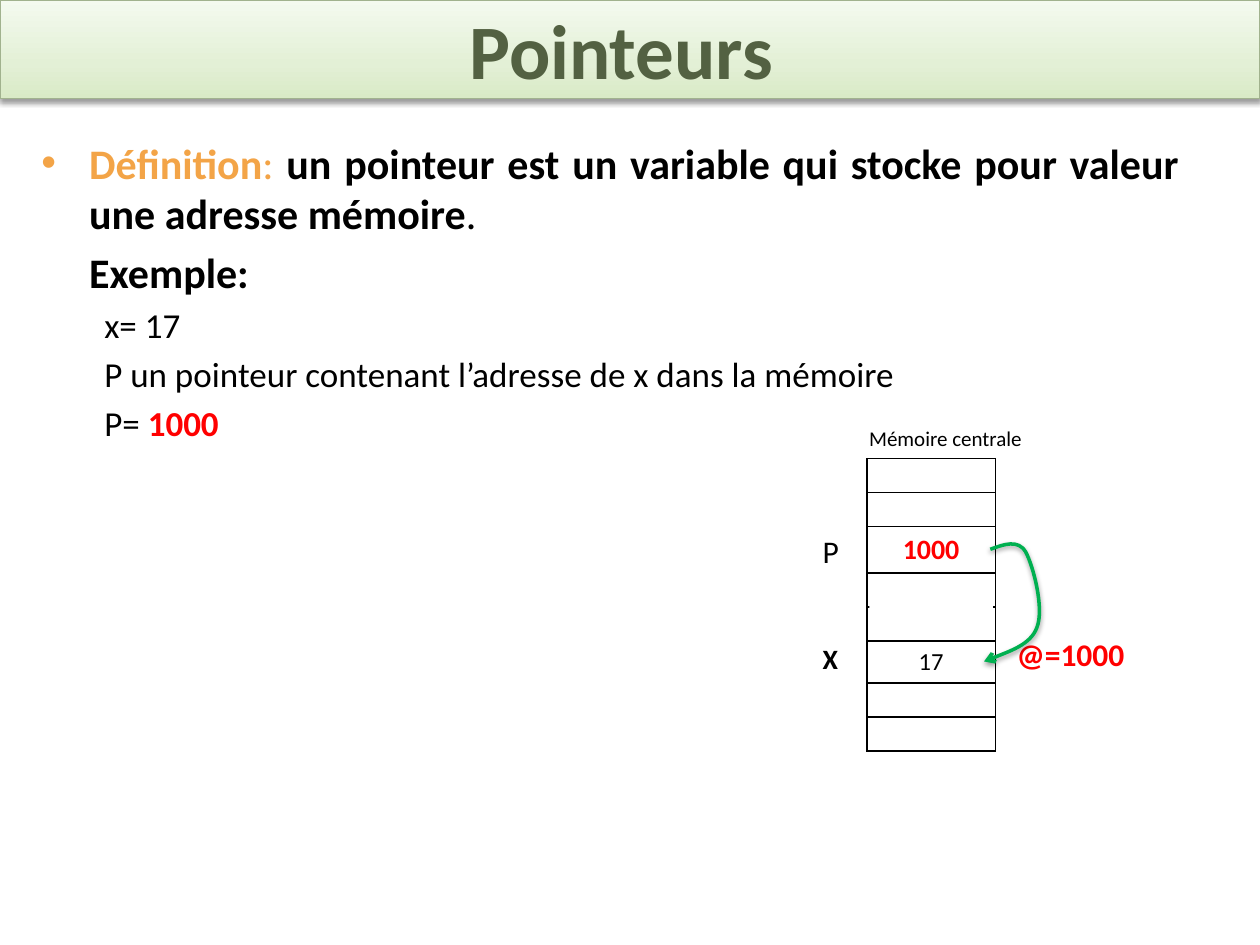
from copy import deepcopy

from lxml.etree import SubElement
from pptx import Presentation
from pptx.dml.color import RGBColor
from pptx.enum.shapes import MSO_SHAPE as Preset
from pptx.enum.text import MSO_ANCHOR as Anchor, PP_ALIGN as Align
from pptx.oxml.ns import qn
from pptx.util import Inches, Pt

FONT = "Calibri"
UNIT = Inches(0.1)  # side of a grid cell: the slide is 100 columns by 75 rows
COLORS = {
    "black": "000000", "white": "FFFFFF", "red": "FF0000", "green": "00B050",
    "orange": "F3A447", "title": "536142", "border": "A1B28E",
}
TITLE_FILL = [("D9EAC6", 0), ("E3F0D6", 0.35), ("F4FAEF", 1)]


def rgb(name):
    return RGBColor.from_string(COLORS[name])


def grid(*lengths):
    return [round(length * UNIT) for length in lengths]


def add_xml(parent, tag, **attributes):
    return SubElement(parent, qn(tag), {k: str(v) for k, v in attributes.items()})


class SlideBuilder:
    def __init__(self, slide):
        self.slide = slide
        self.shapes = slide.shapes

    def add_runs(self, paragraph, *runs, size, align=Align.LEFT):
        """Fill a paragraph with runs of (text, colour, bold)."""
        paragraph.alignment = align
        for words, color, bold in runs:
            run = paragraph.add_run()
            run.text = words
            font = run.font
            font.name, font.size, font.bold = FONT, Pt(size), bold
            font.color.rgb = rgb(color)

    def cast_shadow(self, shape):
        shape.shadow.inherit = False
        effects = shape._element.spPr.find(qn("a:effectLst"))
        shadow = add_xml(effects, "a:outerShdw", blurRad=Pt(3.1), dist=Pt(1.6),
                         dir=90 * 60000, algn="ctr", rotWithShape=0)
        add_xml(add_xml(shadow, "a:srgbClr", val=COLORS["black"]), "a:alpha", val=38000)

    def rectangle(self, *place):
        shape = self.shapes.add_shape(Preset.RECTANGLE, *grid(*place))
        shape.shadow.inherit = False
        return shape

    def title_band(self, words, *place):
        band = self.rectangle(*place)
        band.fill.gradient()
        band.fill.gradient_angle = 90
        stop_list = band._element.spPr.find(qn("a:gradFill")).find(qn("a:gsLst"))
        stop_list.insert(1, deepcopy(stop_list[0]))
        for stop, (color, position) in zip(band.fill.gradient_stops, TITLE_FILL):
            stop.color.rgb = RGBColor.from_string(color)
            stop.position = position
        band.line.color.rgb = rgb("border")
        band.line.width = Pt(0.75)
        self.cast_shadow(band)
        band.text_frame.vertical_anchor = Anchor.MIDDLE
        self.add_runs(band.text_frame.paragraphs[0], (words, "title", True),
                      size=44, align=Align.CENTER)

    def cover(self, *place):
        """Hide the border between two memory cells."""
        patch = self.rectangle(*place)
        patch.fill.solid()
        patch.fill.fore_color.rgb = rgb("white")
        patch.line.fill.background()

    def text_box(self, *place):
        frame = self.shapes.add_textbox(*grid(*place)).text_frame
        frame.word_wrap = True
        return frame

    def label(self, words, *place, size, color="black", bold=False):
        self.add_runs(self.text_box(*place).paragraphs[0], (words, color, bold), size=size)

    def body(self, lines, *place):
        """Add lines of (size, left margin, first indent, bullet, runs)."""
        frame = self.text_box(*place)
        for i, (size, margin, indent, bullet, runs) in enumerate(lines):
            paragraph = frame.add_paragraph() if i else frame.paragraphs[0]
            if i:
                paragraph.space_before = Pt(size * 0.2)
            properties = paragraph._p.get_or_add_pPr()
            properties.set("marL", str(Inches(margin)))
            properties.set("indent", str(Inches(indent)))
            if bullet:
                add_xml(properties, "a:buFont", typeface="Arial")
                add_xml(properties, "a:buChar", char=bullet)
            else:
                add_xml(properties, "a:buNone")
            self.add_runs(paragraph, *runs, size=size, align=Align.JUSTIFY)

    def memory(self, contents, left, top, width, row_height):
        """Draw one bordered cell per row; contents maps a row to (run, size)."""
        count = 8
        table = self.shapes.add_table(
            count, 1, *grid(left, top, width, row_height * count)).table
        table.first_row = table.horz_banding = False
        for i, row in enumerate(table.rows):
            row.height = grid(row_height)[0]
            cell = row.cells[0]
            cell.fill.background()
            properties = cell._tc.get_or_add_tcPr()
            for position, side in enumerate("LRTB"):
                border = add_xml(properties, f"a:ln{side}", w=Pt(1))
                add_xml(add_xml(border, "a:solidFill"), "a:srgbClr", val=COLORS["black"])
                properties.insert(position, border)
            paragraph = cell.text_frame.paragraphs[0]
            if i in contents:
                run, size = contents[i]
                self.add_runs(paragraph, run, size=size, align=Align.CENTER)
            else:
                add_xml(paragraph._p, "a:endParaRPr", sz=1000)

    def curved_arrow(self, start, *controls):
        """Draw Bezier curves, each given by three control points."""
        builder = self.shapes.build_freeform(*grid(*start))
        builder.add_line_segments([grid(*point) for point in controls], close=False)
        arrow = builder.convert_to_shape()
        segments = list(arrow._element.iter(qn("a:lnTo")))
        outline = segments[0].getparent()
        for i in range(0, len(segments), 3):
            curve = add_xml(outline, "a:cubicBezTo")
            for segment in segments[i:i + 3]:
                curve.append(segment[0])
                outline.remove(segment)
        arrow.fill.background()
        arrow.line.color.rgb = rgb("green")
        arrow.line.width = Pt(2)
        add_xml(arrow._element.spPr.find(qn("a:ln")), "a:tailEnd", type="arrow")
        self.cast_shadow(arrow)


def main():
    deck = Presentation()
    deck.slide_width, deck.slide_height = grid(100, 75)
    page = SlideBuilder(deck.slides.add_slide(deck.slide_layouts[6]))

    page.title_band("Pointeurs ", 0, 0, 100, 7.8)
    example = (20, 0.81, -0.31, None)
    page.body([
        (24, 0.38, -0.38, "•", [
            ("Définition", "orange", True), (": ", "orange", False),
            ("un pointeur est un variable qui stocke pour valeur une adresse mémoire",
             "black", True),
            (". ", "black", False)]),
        (24, 0.38, 0, None, [("Exemple: ", "black", True)]),
        (*example, [("x= 17", "black", False)]),
        (*example, [("P un pointeur contenant l’adresse de x dans la mémoire ",
                     "black", False)]),
        (*example, [("P= ", "black", False), ("1000", "red", True)]),
    ], 2.3, 10.4, 92.3, 61.7)

    page.memory({2: (("1000", "red", True), 16), 5: (("17", "black", False), 14)},
                68.8, 36.4, 10.2, 2.7)
    page.label("@=1000", 79.7, 49.9, 13.7, 4, size=18, color="red", bold=True)
    page.label("X", 64.3, 50.4, 4.7, 3.7, size=16, bold=True)
    page.label("P", 64.3, 41.7, 4.7, 4, size=18)
    page.cover(69, 46.1, 9.8, 3.5)
    page.label("Mémoire centrale", 68, 33.3, 16.4, 3, size=12)
    page.curved_arrow((78.6, 43.6),
                      (79.7, 43.2), (80.8, 42.8), (81.4, 43.8),
                      (82, 44.9), (82.9, 48.3), (82.3, 49.8),
                      (81.8, 51.2), (78.1, 52.5), (78.1, 52.5))
    deck.save("out.pptx")


if __name__ == "__main__":
    main()
